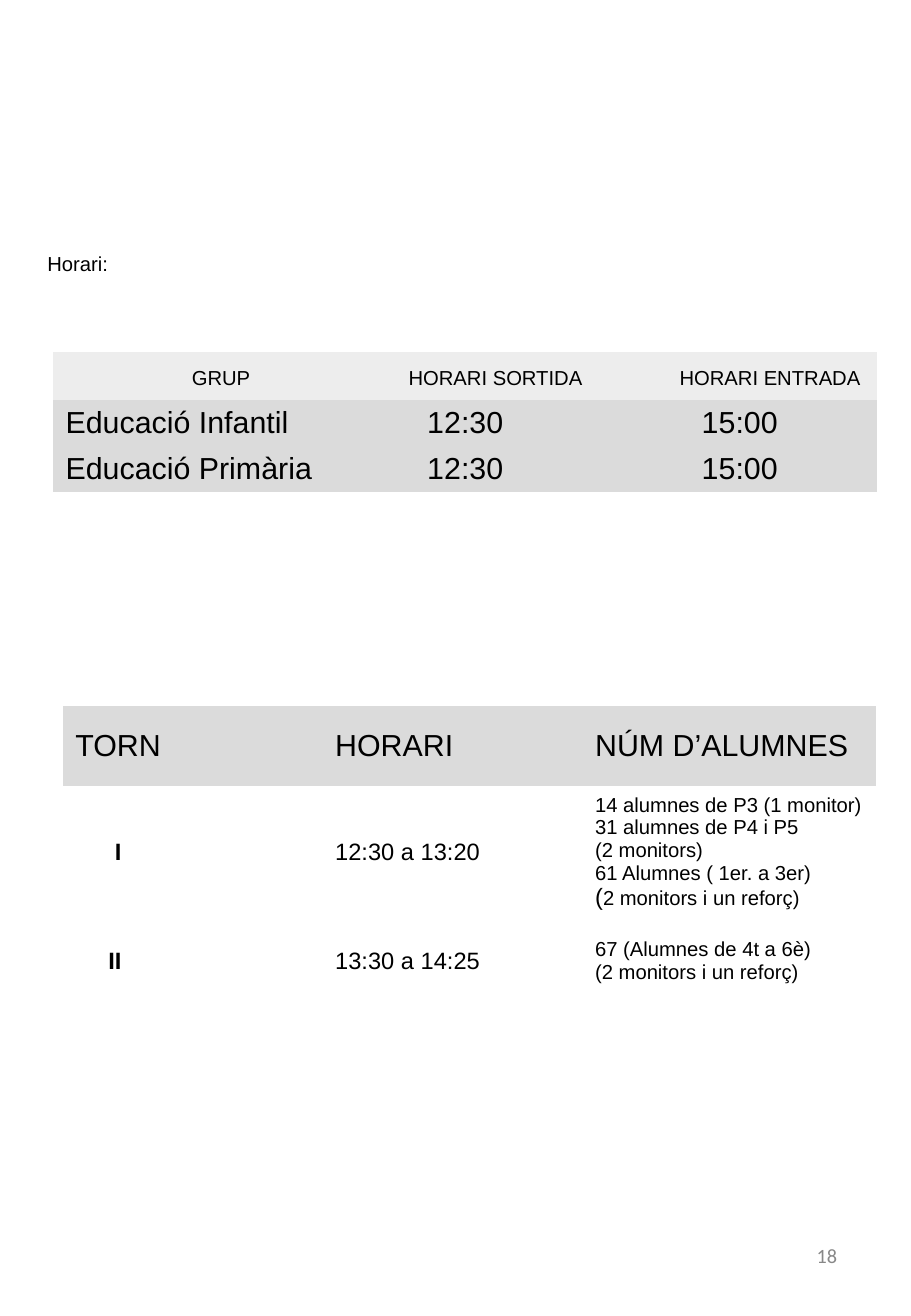
from pptx import Presentation
from pptx.dml.color import RGBColor
from pptx.enum.text import MSO_ANCHOR, MSO_AUTO_SIZE, PP_ALIGN
from pptx.util import Inches, Pt

LEFT, MID, RIGHT = PP_ALIGN.LEFT, PP_ALIGN.CENTER, PP_ALIGN.RIGHT

THEME = {
    "font": "Arial", "footer": "Calibri",
    "ink": "000000", "muted": "888888", "pale": "EDEDED", "grey": "DBDBDB",
    "small": 12, "medium": 14, "large": 18,
}
PLAIN = "{2D5ABB26-0587-4C30-8999-92F81FD0307C}"  # table style with no grid

TITLE = "Horari:"
NUMBER = "18"

GROUPS = [
    ["GRUP", "HORARI SORTIDA", "HORARI ENTRADA"],
    ["Educació Infantil", "12:30", "15:00"],
    ["Educació Primària", "12:30", "15:00"],
]
# A line is a string, or a list of (text, size) runs.
TURNS = [
    ["TORN", "HORARI", "NÚM D’ALUMNES"],
    ["I", "12:30 a 13:20", [
        "14 alumnes de P3 (1 monitor)",
        "31 alumnes de P4 i P5",
        "(2 monitors)",
        "61 Alumnes ( 1er. a 3er)",
        [("(", "medium"), ("2 monitors i un reforç)", "small")],
    ]],
    ["II", "13:30 a 14:25", [
        "67 (Alumnes de 4t a 6è)",
        "(2 monitors i un reforç)",
    ]],
]

# Formats: size, alignment, fill, bold, line spacing, left and right inset
BASE = {"size": "large", "align": LEFT, "fill": None, "bold": False,
        "space": 1, "left": 0.1, "right": 0.1}
HEAD = BASE | {"size": "small", "align": MID, "fill": "pale",
               "space": 1.25, "left": 0.57, "right": 0.07}
NAME = BASE | {"fill": "grey"}
TIME = NAME | {"align": MID}
TURN = BASE | {"size": "medium", "bold": True, "align": RIGHT, "right": 1.66}
SPAN = BASE | {"size": "medium"}
COUNT = BASE | {"size": "small"}


def write(frame, lines, form, font="font", ink="ink"):
    for i, line in enumerate(lines):
        para = frame.paragraphs[0] if i == 0 else frame.add_paragraph()
        para.alignment = form["align"]
        para.line_spacing = form["space"]
        runs = [(line, form["size"])] if isinstance(line, str) else line
        for text, size in runs:
            run = para.add_run()
            run.text = text
            look = {"name": THEME[font], "size": Pt(THEME[size]),
                    "bold": form["bold"]}
            for key, value in look.items():
                setattr(run.font, key, value)
            run.font.color.rgb = RGBColor.from_string(THEME[ink])


def frame_up(frame):
    look = {"word_wrap": True, "auto_size": MSO_AUTO_SIZE.NONE,
            "vertical_anchor": MSO_ANCHOR.MIDDLE}
    for key, value in look.items():
        setattr(frame, key, value)


def add_grid(slide, spot, widths, heights, rows, head, body):
    """Add a table; head formats the first row, body each column below."""
    size = sum(widths), sum(heights)
    table = slide.shapes.add_table(
        len(rows), len(widths), *map(Inches, spot + size)).table
    table.first_row = table.horz_banding = False
    table._tbl.tblPr[0].text = PLAIN
    for col, width in zip(table.columns, widths):
        col.width = Inches(width)
    for r, (row, height) in enumerate(zip(rows, heights)):
        table.rows[r].height = Inches(height)
        for c, text in enumerate(row):
            cell = table.cell(r, c)
            form = body[c] if r else head
            edge = 0.05 if form["space"] == 1 else 0
            look = {"margin_left": form["left"], "margin_right": form["right"],
                    "margin_top": edge, "margin_bottom": edge}
            for key, value in look.items():
                setattr(cell, key, Inches(value))
            cell.vertical_anchor = MSO_ANCHOR.MIDDLE
            if form["fill"]:
                cell.fill.solid()
                cell.fill.fore_color.rgb = RGBColor.from_string(
                    THEME[form["fill"]])
            else:
                cell.fill.background()
            lines = [text] if isinstance(text, str) else text
            write(cell.text_frame, lines, form)


def main():
    deck = Presentation()
    deck.slide_width, deck.slide_height = Inches(7.5), Inches(10.83)
    slide = deck.slides.add_slide(deck.slide_layouts[5])

    title = slide.shapes.title
    place = {"left": 0.29, "top": 1.98, "width": 1.11, "height": 0.37}
    for key, value in place.items():
        setattr(title, key, Inches(value))
    frame_up(title.text_frame)
    write(title.text_frame, [TITLE], COUNT)

    add_grid(slide, (0.52, 5.81), (2.14, 2.14, 2.41), (0.66, 1.09, 0.7),
             TURNS, NAME, [TURN, SPAN, COUNT])
    add_grid(slide, (0.44, 2.9), (2.26,) * 3, (0.39, 0.38, 0.38),
             GROUPS, HEAD, [NAME, TIME, TIME])

    page = slide.shapes.add_textbox(*map(Inches, (5.3, 10.04, 1.69, 0.58)))
    frame_up(page.text_frame)
    write(page.text_frame, [NUMBER], COUNT | {"align": RIGHT},
          "footer", "muted")
    deck.save("out.pptx")


if __name__ == "__main__":
    main()
